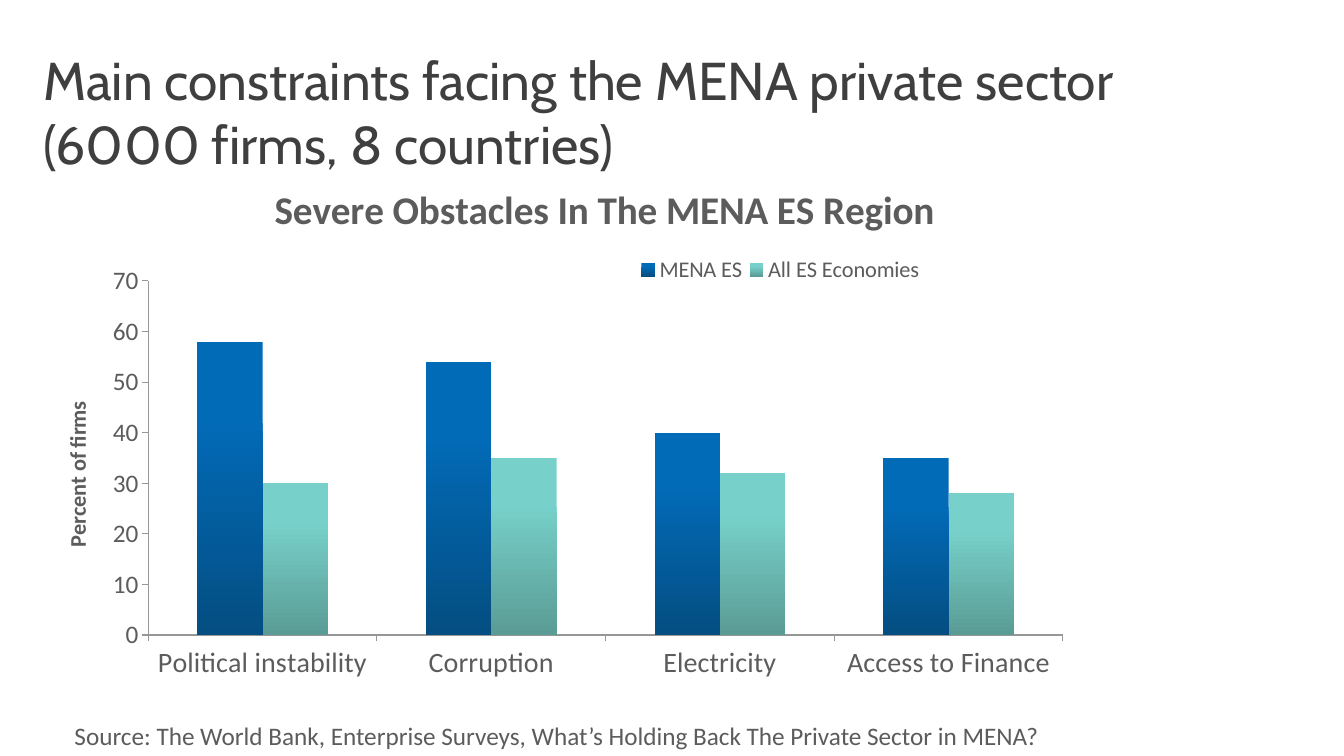
import pptx
import pptx.chart.data
import pptx.dml.color
import pptx.enum.chart
import pptx.enum.text
import pptx.oxml
import pptx.oxml.ns
import pptx.util
from pptx.util import Inches

GREY = "5C5C5C"
AXIS_GREY = "979797"
CATEGORIES = ["Political instability", "Corruption", "Electricity", "Access to Finance"]
SERIES = [
    ("MENA ES", [58, 54, 40, 35], "026BB8", "044E82"),
    ("All ES Economies", [30, 35, 32, 28], "77D1CA", "5A9C95"),
]


def color(value):
    return pptx.dml.color.RGBColor.from_string(value)


def format_font(font, size, name="Calibri", fill=GREY, bold=False):
    font.size = pptx.util.Pt(size)
    font.name = name
    font.bold = bold
    font.color.rgb = color(fill)


def add_text(slide, text, left, top, width, height, wrap=True, anchor="TOP", inset=(0.1, 0.05), **font):
    shape = slide.shapes.add_textbox(Inches(left), Inches(top), Inches(width), Inches(height))
    frame = shape.text_frame
    frame.word_wrap = wrap
    frame.vertical_anchor = pptx.enum.text.MSO_ANCHOR[anchor]
    frame.margin_left = frame.margin_right = Inches(inset[0])
    frame.margin_top = frame.margin_bottom = Inches(inset[1])
    paragraph = frame.paragraphs[0]
    run = paragraph.add_run()
    run.text = text
    format_font(run.font, **font)


def place(element, after=None, inner=False, **fractions):
    qn = pptx.oxml.ns.qn
    for layout in element.findall(qn("c:layout")):
        element.remove(layout)
    target = '<c:layoutTarget val="inner"/>' if inner else ""
    modes = "".join(f'<c:{key}Mode val="edge"/>' for key in "xy")
    values = "".join(f'<c:{key} val="{value}"/>' for key, value in fractions.items())
    layout = pptx.oxml.parse_xml(
        f'<c:layout {pptx.oxml.ns.nsdecls("c")}><c:manualLayout>'
        f"{target}{modes}{values}</c:manualLayout></c:layout>"
    )
    if after:
        element.find(qn(after)).addnext(layout)
    else:
        element.insert(0, layout)


def add_title(title, text, size, x, y):
    run = title.text_frame.paragraphs[0].add_run()
    run.text = text
    format_font(run.font, size, bold=True)
    place(title._element, after="c:tx", x=x, y=y)


def format_axis(axis, size):
    axis.has_major_gridlines = False
    axis.major_tick_mark = pptx.enum.chart.XL_TICK_MARK.OUTSIDE
    axis.format.line.color.rgb = color(AXIS_GREY)
    axis.format.line.width = pptx.util.Pt(0.75)
    format_font(axis.tick_labels.font, size)


def format_bars(series, top, bottom):
    fill = series.format.fill
    fill.gradient()
    fill.gradient_angle = 270
    for stop, value, position in zip(fill.gradient_stops, (top, bottom), (0.25, 1)):
        stop.color.rgb = color(value)
        stop.position = position


def add_obstacles_chart(slide):
    data = pptx.chart.data.CategoryChartData()
    data.categories = CATEGORIES
    for name, values, _, _ in SERIES:
        data.add_series(name, values)
    kind = pptx.enum.chart.XL_CHART_TYPE.COLUMN_CLUSTERED
    chart = slide.shapes.add_chart(
        kind, Inches(0.37), Inches(1.36), Inches(10.38), Inches(5.49), data
    ).chart
    format_font(chart.font, 10)
    chart.has_title = True
    add_title(chart.chart_title, "Severe Obstacles In The MENA ES Region", 28, x=0.22, y=0.07)

    plot = chart.plots[0]
    plot.gap_width = 150
    plot.overlap = 0
    plot.vary_by_categories = False
    for series, (_, _, top, bottom) in zip(plot.series, SERIES):
        format_bars(series, top, bottom)
    place(chart._chartSpace.chart.plotArea, inner=True, x=0.106, y=0.26, w=0.874, h=0.64)

    format_axis(chart.category_axis, 20)
    format_axis(chart.value_axis, 18)
    chart.value_axis.minimum_scale = 0
    chart.value_axis.maximum_scale = 70
    chart.value_axis.major_unit = 10
    add_title(chart.value_axis.axis_title, "Percent of firms", 16, x=0.02, y=0.47)

    chart.has_legend = True
    legend = chart.legend
    legend.position = pptx.enum.chart.XL_LEGEND_POSITION.TOP
    legend.include_in_layout = False
    format_font(legend.font, 16)
    place(legend._element, after="c:legendPos", x=0.57, y=0.21, w=0.28, h=0.06)


def main():
    presentation = pptx.Presentation()
    presentation.slide_width = Inches(13.33)
    presentation.slide_height = Inches(7.5)
    slide = presentation.slides.add_slide(presentation.slide_layouts[6])
    add_text(
        slide, "Main constraints facing the MENA private sector (6000 firms, 8 countries)",
        0.31, 0.38, 11.5, 1.45, anchor="MIDDLE", inset=(0.12, 0.06),
        size=38, name="Cabin", fill="3F3F3F",
    )
    add_obstacles_chart(slide)
    add_text(
        slide, "Source: The World Bank, Enterprise Surveys, What’s Holding Back The Private Sector in MENA?",
        0.64, 7.1, 9.85, 0.4, wrap=False, size=18,
    )
    presentation.save("out.pptx")


if __name__ == "__main__":
    main()
